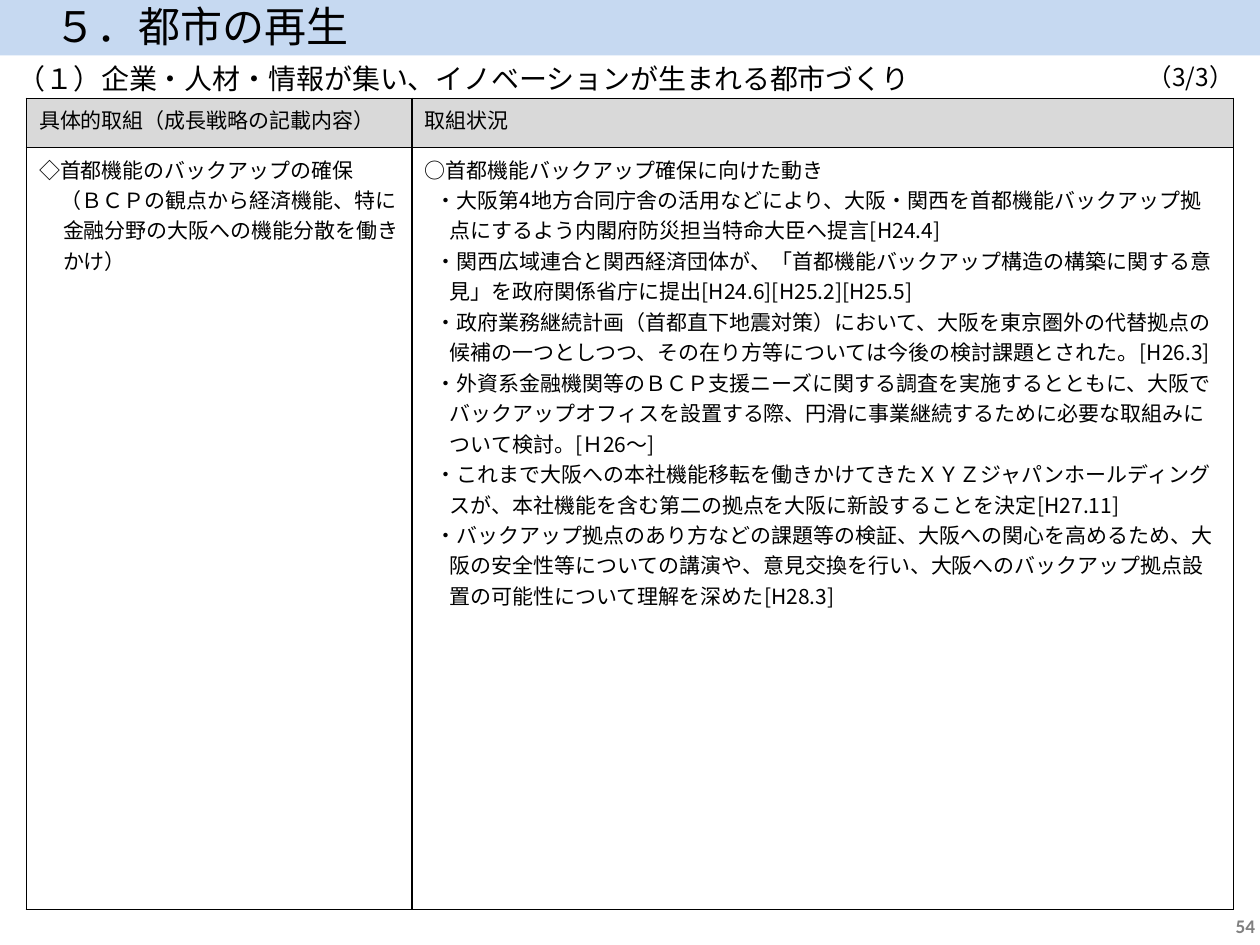
"""Build the slide on urban renewal with its table of measures and progress."""
from lxml import etree
from pptx import Presentation
from pptx.dml.color import RGBColor
from pptx.enum.text import MSO_ANCHOR, MSO_AUTO_SIZE, PP_ALIGN
from pptx.oxml.ns import qn
from pptx.util import Inches, Pt

LEFT, CENTER, RIGHT = PP_ALIGN.LEFT, PP_ALIGN.CENTER, PP_ALIGN.RIGHT
TOP, MIDDLE, BOTTOM = MSO_ANCHOR.TOP, MSO_ANCHOR.MIDDLE, MSO_ANCHOR.BOTTOM
NO_AUTOFIT = MSO_AUTO_SIZE.NONE
TITLE_ONLY = 5

JAPANESE, LATIN = "Noto Sans CJK JP", "Calibri"
BLACK, GRAY, BAR_BLUE, HEADER_GRAY, WHITE = "000000", "808080", "C6D9F1", "D9D9D9", "FFFFFF"

TITLE = "５．都市の再生"
LABELS = [
    {"text": "（１）企業・人材・情報が集い、イノベーションが生まれる都市づくり",
     "box": (0.04, 0.44, 7.72, 0.37), "size": 16, "anchor": TOP},
    {"text": "（3/3）", "box": (8.86, 0.44, 1.18, 0.34), "size": 14,
     "anchor": MIDDLE, "alignment": CENTER},
    {"text": "54", "box": (7.73, 7.09, 2.33, 0.4), "size": 11, "anchor": BOTTOM,
     "alignment": RIGHT, "font": LATIN, "color": GRAY, "bold": True},
]

PLAIN, DIAMOND, BRACKET, BULLET = (0, 0), (0.19, -0.19), (0.19, -0.02), (0.2, -0.11)
HEADERS = ["具体的取組（成長戦略の記載内容）", "取組状況"]
MEASURES = [
    ("◇首都機能のバックアップの確保", DIAMOND),
    ("（ＢＣＰの観点から経済機能、特に金融分野の大阪への機能分散を働きかけ）", BRACKET),
]
ACTIONS = [
    "・大阪第4地方合同庁舎の活用などにより、大阪・関西を首都機能バックアップ拠点にするよう内閣府防災担当特命大臣へ提言[H24.4]",
    "・関西広域連合と関西経済団体が、「首都機能バックアップ構造の構築に関する意見」を政府関係省庁に提出[H24.6][H25.2][H25.5]",
    "・政府業務継続計画（首都直下地震対策）において、大阪を東京圏外の代替拠点の候補の一つとしつつ、その在り方等については今後の検討課題とされた。[H26.3]",
    "・外資系金融機関等のＢＣＰ支援ニーズに関する調査を実施するとともに、大阪でバックアップオフィスを設置する際、円滑に事業継続するために必要な取組みについて検討。[Ｈ26～]",
    "・これまで大阪への本社機能移転を働きかけてきたＸＹＺジャパンホールディングスが、本社機能を含む第二の拠点を大阪に新設することを決定[H27.11]",
    "・バックアップ拠点のあり方などの課題等の検証、大阪への関心を高めるため、大阪の安全性等についての講演や、意見交換を行い、大阪へのバックアップ拠点設置の可能性について理解を深めた[H28.3]",
]
PROGRESS = [("○首都機能バックアップ確保に向けた動き", PLAIN)]
PROGRESS += [(action, BULLET) for action in ACTIONS]
ROWS = [([[(header, PLAIN)] for header in HEADERS], HEADER_GRAY),
        ([MEASURES, PROGRESS], WHITE)]
TABLE_BOX = (0.21, 0.78, 9.58, 6.44)
COLUMN_WIDTHS, ROW_HEIGHTS = (3.06, 6.52), (0.39, 6.05)


def set_format(target, values):
    for name, value in values.items():
        setattr(target, name, value)


def paint(fill, color):
    fill.solid()
    fill.fore_color.rgb = RGBColor.from_string(color)


def place(shape, box):
    names = ("left", "top", "width", "height")
    set_format(shape, dict(zip(names, map(Inches, box))))


def write(paragraph, text, size, font=JAPANESE, color=BLACK, bold=False,
          alignment=LEFT, indent=PLAIN):
    paragraph.alignment = alignment
    run = paragraph.add_run()
    run.text = text
    set_format(run.font, {"size": Pt(size), "name": font, "bold": bold})
    paint(run.font.fill, color)
    etree.SubElement(run.font._element, qn("a:ea")).set("typeface", font)
    if indent != PLAIN:
        properties = paragraph._p.get_or_add_pPr()
        for name, length in zip(("marL", "indent"), indent):
            properties.set(name, str(Inches(length)))


def add_borders(cell, color=BLACK, width=1):
    properties = cell._tc.get_or_add_tcPr()
    for index, side in enumerate(("lnL", "lnR", "lnT", "lnB")):
        line = etree.Element(qn(f"a:{side}"), w=str(Pt(width)))
        fill = etree.SubElement(line, qn("a:solidFill"))
        etree.SubElement(fill, qn("a:srgbClr"), val=color)
        properties.insert(index, line)


def add_title(slide):
    title = slide.shapes.title
    place(title, (0, -0.03, 10, 0.47))
    paint(title.fill, BAR_BLUE)
    set_format(title.text_frame, {
        "auto_size": NO_AUTOFIT, "word_wrap": False, "vertical_anchor": MIDDLE,
        "margin_left": Inches(0.43)})
    write(title.text_frame.paragraphs[0], TITLE, 24)


def add_label(slide, text, box, size, anchor, **style):
    label = slide.shapes.add_textbox(*map(Inches, box))
    set_format(label.text_frame, {"word_wrap": True, "vertical_anchor": anchor})
    write(label.text_frame.paragraphs[0], text, size, **style)


def add_progress_table(slide):
    table = slide.shapes.add_table(
        len(ROWS), len(HEADERS), *map(Inches, TABLE_BOX)).table
    for column, width in zip(table.columns, COLUMN_WIDTHS):
        column.width = Inches(width)
    for row, height, (contents, color) in zip(table.rows, ROW_HEIGHTS, ROWS):
        row.height = Inches(height)
        for cell, entries in zip(row.cells, contents):
            paint(cell.fill, color)
            add_borders(cell)
            for index, (text, indent) in enumerate(entries):
                frame = cell.text_frame
                paragraph = frame.add_paragraph() if index else frame.paragraphs[0]
                write(paragraph, text, 12, indent=indent)


def main():
    presentation = Presentation()
    set_format(presentation, {"slide_width": Inches(10), "slide_height": Inches(7.5)})
    slide = presentation.slides.add_slide(presentation.slide_layouts[TITLE_ONLY])
    add_title(slide)
    add_progress_table(slide)
    for label in LABELS:
        add_label(slide, **label)
    presentation.save("out.pptx")


if __name__ == "__main__":
    main()
